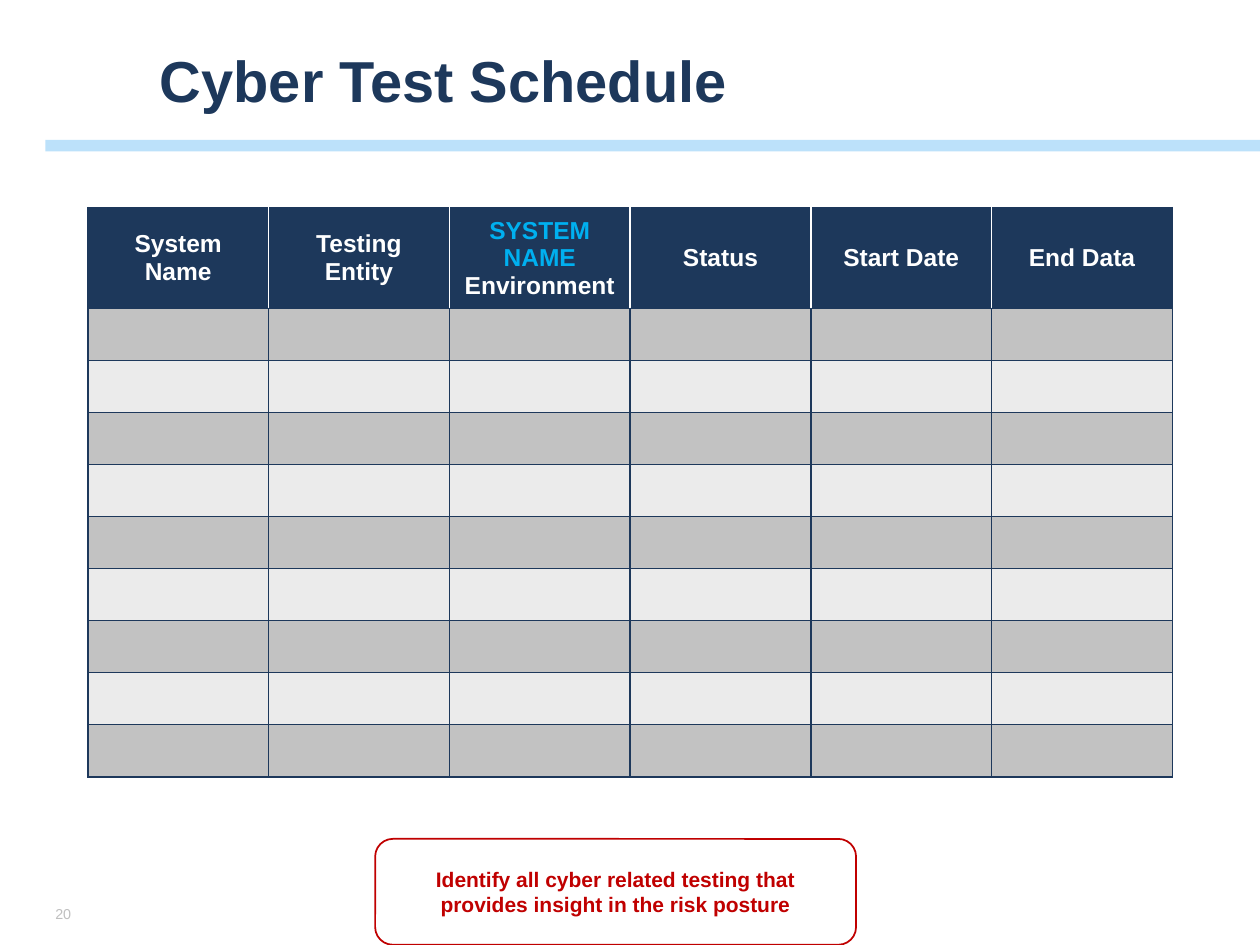
from lxml.etree import SubElement
from pptx import Presentation
from pptx.dml.color import RGBColor
from pptx.enum.shapes import MSO_SHAPE
from pptx.enum.text import MSO_ANCHOR, PP_ALIGN
from pptx.oxml.ns import qn
from pptx.util import Pt

NAVY = RGBColor(0x1D, 0x38, 0x5B)
WHITE = RGBColor(0xFF, 0xFF, 0xFF)
SKY = RGBColor(0x65, 0xBA, 0xF5)
CYAN = RGBColor(0x00, 0xB0, 0xF0)
RED = RGBColor(0xC0, 0x00, 0x00)
PALE = RGBColor(0xBF, 0xBF, 0xBF)
DARK = RGBColor(0xC2, 0xC2, 0xC2)
LIGHT = RGBColor(0xEB, 0xEB, 0xEB)

HEADS = ["System Name", "Testing Entity", "SYSTEM NAME\nEnvironment",
         "Status", "Start Date", "End Data"]
ROWS = 9


def style(par, size, color, bold=True, align=PP_ALIGN.LEFT):
    par.alignment = align
    for run in par.runs:
        font = run.font
        font.name, font.size, font.bold = "Arial", Pt(size), bold
        font.color.rgb = color


def add_title(slide, text):
    title = slide.shapes.title
    title.left, title.top = Pt(84.2), Pt(23.8)
    title.width, title.height = Pt(620), Pt(48.2)
    frame = title.text_frame
    frame.text = text
    frame.vertical_anchor = MSO_ANCHOR.MIDDLE
    frame.paragraphs[0].line_spacing = 0.9
    style(frame.paragraphs[0], 33, NAVY)


def add_bar(slide):
    bar = slide.shapes.add_shape(MSO_SHAPE.RECTANGLE, Pt(25.9), Pt(79.9),
                                 Pt(694.1), Pt(6.6))
    bar.shadow.inherit = False
    bar.fill.solid()
    bar.fill.fore_color.rgb = SKY
    bar.line.fill.background()
    tint = bar.fill._xPr.find(".//" + qn("a:srgbClr"))
    SubElement(tint, qn("a:alpha"), val="43000")


def add_number(slide, text):
    box = slide.shapes.add_textbox(Pt(26.6), Pt(512.6), Pt(23), Pt(18.7))
    frame = box.text_frame
    frame.word_wrap = True
    frame.margin_left = frame.margin_right = Pt(5)
    frame.margin_top = frame.margin_bottom = Pt(2.9)
    frame.vertical_anchor = MSO_ANCHOR.MIDDLE
    frame.text = text
    style(frame.paragraphs[0], 8.2, PALE, bold=False)


def set_edges(cell, left, right):
    """Draw 1 pt borders; top and bottom are always navy."""
    props = cell._tc.get_or_add_tcPr()
    edges = {"lnL": left, "lnR": right, "lnT": NAVY, "lnB": NAVY}
    for spot, (tag, color) in enumerate(edges.items()):
        line = SubElement(props, qn("a:" + tag), w=str(Pt(1)))
        fill = SubElement(line, qn("a:solidFill"))
        SubElement(fill, qn("a:srgbClr"), val=str(color))
        props.insert(spot, line)


def fill_cell(cell, color):
    cell.fill.solid()
    cell.fill.fore_color.rgb = color


def add_head(cell, text):
    cell.vertical_anchor = MSO_ANCHOR.MIDDLE
    cell.text_frame.text = text
    pars = cell.text_frame.paragraphs
    for par in pars:
        style(par, 14, WHITE, align=PP_ALIGN.CENTER)
    if len(pars) > 1:
        style(pars[0], 14, CYAN, align=PP_ALIGN.CENTER)


def add_grid(slide):
    count = len(HEADS)
    table = slide.shapes.add_table(ROWS + 1, count, Pt(50.2), Pt(118.6),
                                   Pt(620), Pt(322.6)).table
    for col in table.columns:
        col.width = Pt(103.3)
    for num, row in enumerate(table.rows):
        row.height = Pt(29.75 if num else 54.8)
        for spot, cell in enumerate(row.cells):
            if num:
                fill_cell(cell, DARK if num % 2 else LIGHT)
                set_edges(cell, NAVY, NAVY)
            else:
                fill_cell(cell, NAVY)
                add_head(cell, HEADS[spot])
                set_edges(cell, WHITE if spot else NAVY,
                          WHITE if spot < count - 1 else NAVY)


def add_note(slide, text):
    note = slide.shapes.add_shape(MSO_SHAPE.ROUNDED_RECTANGLE, Pt(214.4),
                                  Pt(479.4), Pt(274.8), Pt(60.5))
    note.shadow.inherit = False
    note.fill.solid()
    note.fill.fore_color.rgb = WHITE
    note.line.color.rgb = RED
    note.line.width = Pt(1)
    frame = note.text_frame
    frame.word_wrap = True
    frame.vertical_anchor = MSO_ANCHOR.MIDDLE
    frame.text = text
    style(frame.paragraphs[0], 12, RED, align=PP_ALIGN.CENTER)


def main():
    deck = Presentation()
    deck.slide_width, deck.slide_height = Pt(720), Pt(540)
    slide = deck.slides.add_slide(deck.slide_layouts[5])
    add_bar(slide)
    add_number(slide, "20")
    add_title(slide, "Cyber Test Schedule")
    add_grid(slide)
    add_note(slide, "Identify all cyber related testing that "
                    "provides insight in the risk posture")
    deck.save("out.pptx")


if __name__ == "__main__":
    main()
